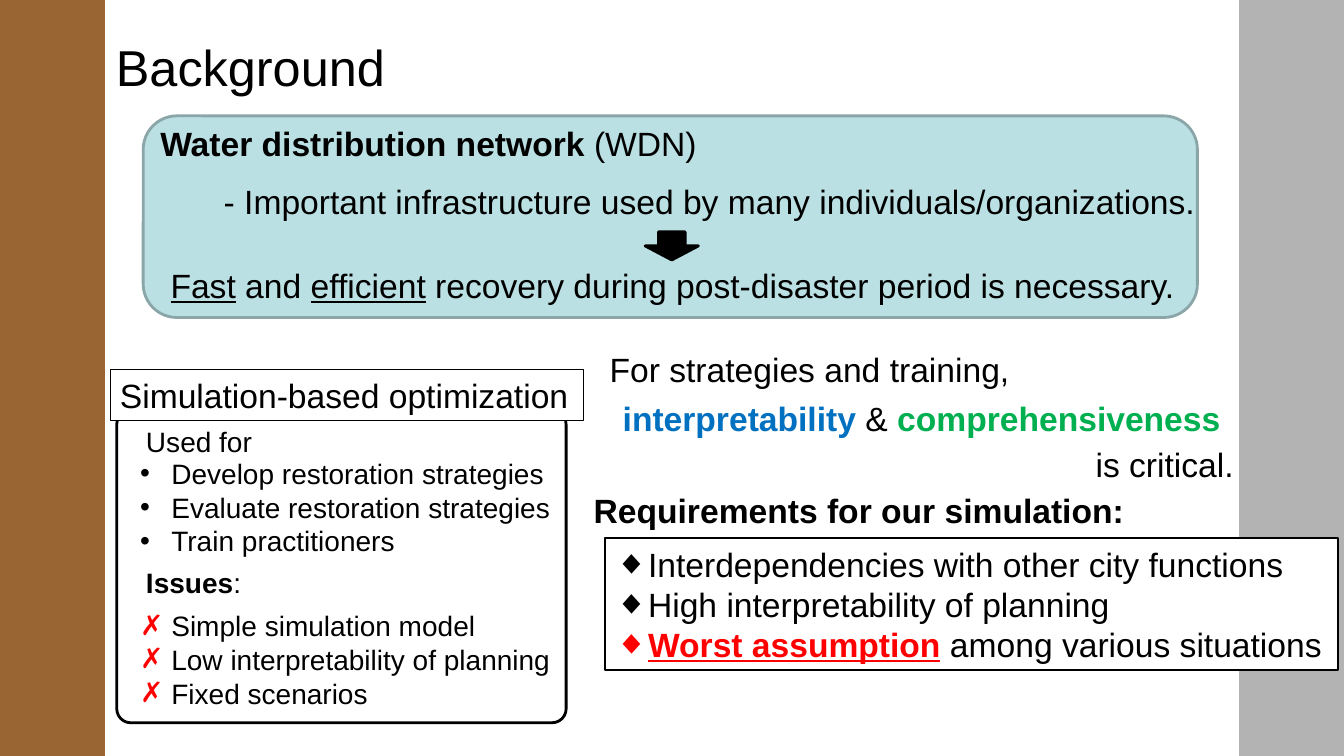
from dataclasses import dataclass

from lxml import etree
from pptx import Presentation
from pptx import util as u
from pptx.dml.color import RGBColor
from pptx.enum import shapes, text
from pptx.oxml.ns import qn

WIDTH, HEIGHT = u.Inches(13.33), u.Inches(7.5)
COLUMNS, ROWS = 32, 18
TITLE_ONLY = 5


@dataclass(frozen=True)
class Theme:
    font: str = "Arial"
    title: int = 36
    body: int = 24
    detail: int = 20
    ink: str = "000000"
    paper: str = "FFFFFF"
    brown: str = "996633"
    grey: str = "B3B3B3"
    panel: str = "BBE0E3"
    panel_edge: str = "8AA6A8"
    red: str = "FF0000"
    blue: str = "0070C0"
    green: str = "00B050"


THEME = Theme()
BOLD = {"bold": True}
UNDERLINE = {"underline": True}


def grid(left, top, width, height):
    """Turn columns and rows into slide lengths."""
    column, row = WIDTH / COLUMNS, HEIGHT / ROWS
    return (round(left * column), round(top * row),
            round(width * column), round(height * row))


def add_block(slide, kind, area, fill, edge=None, weight=2):
    shape = slide.shapes.add_shape(kind, *grid(*area))
    shape.shadow.inherit = False
    shape.fill.solid()
    shape.fill.fore_color.rgb = RGBColor.from_string(fill)
    if edge:
        shape.line.color.rgb = RGBColor.from_string(edge)
        shape.line.width = u.Pt(weight)
    else:
        shape.line.fill.background()
    return shape


def add_bullet(paragraph, mark, color):
    properties = paragraph._p.get_or_add_pPr()
    indent = u.Inches(0.31)
    properties.set("marL", str(indent))
    properties.set("indent", str(-indent))
    holder = etree.SubElement(properties, qn("a:buClr"))
    etree.SubElement(holder, qn("a:srgbClr"), val=color)
    etree.SubElement(properties, qn("a:buFont"), typeface=THEME.font)
    etree.SubElement(properties, qn("a:buChar"), char=mark)


def write(shape, lines, size, align=text.PP_ALIGN.LEFT, bullets=()):
    """Fill a shape; a line is a list of (words, format) runs, a bullet is (mark, color)."""
    frame = shape.text_frame
    frame.word_wrap = False
    frame.auto_size = text.MSO_AUTO_SIZE.NONE
    frame.vertical_anchor = text.MSO_ANCHOR.TOP
    for index, runs in enumerate(lines):
        paragraph = frame.add_paragraph() if index else frame.paragraphs[0]
        paragraph.alignment = align
        if bullets:
            add_bullet(paragraph, *bullets[index])
        paragraph.font.name = THEME.font
        paragraph.font.size = u.Pt(size)
        paragraph.font.color.rgb = RGBColor.from_string(THEME.ink)
        for words, style in runs:
            run = paragraph.add_run()
            run.text = words
            run.font.bold = style.get("bold")
            run.font.underline = style.get("underline")
            if "color" in style:
                run.font.color.rgb = RGBColor.from_string(style["color"])


def add_text(slide, area, lines, size=THEME.body, **options):
    write(slide.shapes.add_textbox(*grid(*area)), lines, size, **options)


def plain(*lines):
    return [[(line, {})] for line in lines]


def add_title(slide, words):
    title = slide.shapes.title
    title.left, title.top, title.width, title.height = grid(2.52, 0.5, 26.98, 2.18)
    write(title, plain(words), THEME.title)
    title.text_frame.vertical_anchor = text.MSO_ANCHOR.MIDDLE


def add_network_panel(slide):
    add_block(slide, shapes.MSO_SHAPE.ROUNDED_RECTANGLE, (3.41, 2.76, 25.1, 4.8),
              THEME.panel, THEME.panel_edge)
    add_text(slide, (3.58, 2.81, 13.37, 1.2),
             [[("Water distribution network", BOLD), (" (WDN)", {})]])
    add_text(slide, (5.09, 4.18, 23.86, 1.2),
             plain("- Important infrastructure used by many individuals/organizations."))
    add_text(slide, (3.7, 6.19, 24.62, 1.2),
             [[("Fast", UNDERLINE), (" and ", {}), ("efficient", UNDERLINE),
               (" recovery during post-disaster period is necessary.", {})]],
             align=text.PP_ALIGN.CENTER)
    add_block(slide, shapes.MSO_SHAPE.DOWN_ARROW, (15.36, 5.52, 1.27, 0.67),
              THEME.ink, THEME.ink)


def add_simulation_card(slide):
    card = add_block(slide, shapes.MSO_SHAPE.ROUNDED_RECTANGLE, (2.78, 9.77, 10.7, 7.44),
                     THEME.paper, THEME.ink)
    card.adjustments[0] = 0.045
    heading = add_block(slide, shapes.MSO_SHAPE.RECTANGLE, (2.62, 8.81, 11.28, 1.2),
                        THEME.paper, THEME.ink, 0.75)
    write(heading, plain("Simulation-based optimization"), THEME.body)
    groups = [
        (9.98, [("Used for", {})], 10.75, ("•", THEME.ink),
         ("Develop restoration strategies", "Evaluate restoration strategies",
          "Train practitioners")),
        (13.34, [("Issues", BOLD), (":", {})], 14.38, ("✗", THEME.red),
         ("Simple simulation model", "Low interpretability of planning",
          "Fixed scenarios")),
    ]
    for label_top, label, list_top, bullet, items in groups:
        add_text(slide, (3.24, label_top, 3.02, 1.06), [label], THEME.detail)
        add_text(slide, (3.1, list_top, 10.33, 2.66), plain(*items), THEME.detail,
                 bullets=[bullet] * len(items))


def add_requirements(slide):
    add_text(slide, (14.28, 8.18, 10.1, 1.2), plain("For strategies and training,"))
    add_text(slide, (14.59, 9.36, 15.07, 1.2),
             [[("interpretability", {"bold": True, "color": THEME.blue}), (" & ", {}),
               ("comprehensiveness", {"bold": True, "color": THEME.green})]])
    add_text(slide, (25.85, 10.46, 3.82, 1.2), plain("is critical."))
    add_text(slide, (13.9, 11.54, 13.22, 1.2),
             [[("Requirements for our simulation:", BOLD)]])
    box = add_block(slide, shapes.MSO_SHAPE.RECTANGLE, (14.4, 12.82, 17.47, 3.14),
                    THEME.paper, THEME.ink, 1.5)
    worst = {"bold": True, "underline": True, "color": THEME.red}
    lines = plain("Interdependencies with other city functions",
                  "High interpretability of planning")
    lines.append([("Worst assumption", worst), (" among various situations", {})])
    write(box, lines, THEME.body,
          bullets=[("◆", color) for color in (THEME.ink, THEME.ink, THEME.red)])


def main():
    presentation = Presentation()
    presentation.slide_width, presentation.slide_height = WIDTH, HEIGHT
    slide = presentation.slides.add_slide(presentation.slide_layouts[TITLE_ONLY])
    for left, color in ((29.5, THEME.grey), (0, THEME.brown)):
        add_block(slide, shapes.MSO_SHAPE.RECTANGLE, (left, 0, 2.5, ROWS), color)
    add_title(slide, "Background")
    add_network_panel(slide)
    add_simulation_card(slide)
    add_requirements(slide)
    presentation.save("out.pptx")


if __name__ == "__main__":
    main()
